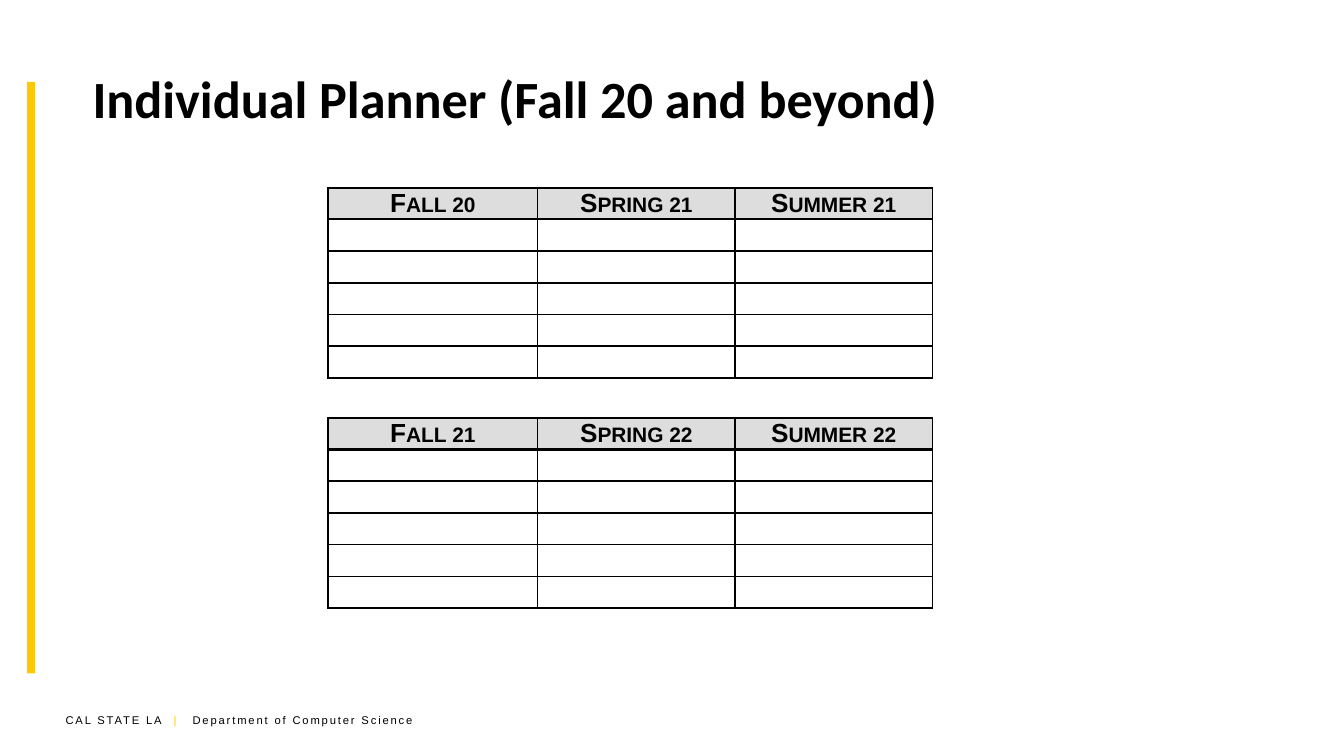
"""Build the individual planner slide with two term tables."""
from lxml import etree
from pptx import Presentation
from pptx.dml.color import RGBColor
from pptx.enum.shapes import MSO_SHAPE
from pptx.enum.text import MSO_ANCHOR, PP_ALIGN
from pptx.oxml.ns import qn
from pptx.util import Cm, Pt

RECT = MSO_SHAPE.RECTANGLE
MIDDLE = MSO_ANCHOR.MIDDLE
CENTER = PP_ALIGN.CENTER

COLORS = {"ink": "000000", "gold": "FCC90A", "head": "DDDDDD"}
TITLE = "Individual Planner (Fall 20 and beyond)"
FOOTER = [
    ("CAL STATE LA", "ink"),
    ("\t|\t", "gold"),
    ("Department of Computer Science", "ink"),
]
YEARS = [
    ["Fall 20", "Spring 21", "Summer 21"],
    ["Fall 21", "Spring 22", "Summer 22"],
]
FORMATS = {
    "title": {"name": "Calibri", "size": Pt(28), "bold": True},
    "head": {"name": "Arial", "size": Pt(14), "bold": True},
    "footer": {"name": "Arial", "size": Pt(6)},
}
TABS = [2.04, 2.4]
COLS = [3.96, 3.73, 3.73]
ROWS = [0.57] + [0.6] * 5
LEFT, TOP, STEP = 6.2, 3.55, 4.35


def color(key):
    return RGBColor.from_string(COLORS[key])


def add_run(para, text, style, ink="ink"):
    run = para.add_run()
    run.text = text
    for key, value in FORMATS[style].items():
        setattr(run.font, key, value)
    run.font.color.rgb = color(ink)
    return run


def add_box(slide, *place):
    frame = slide.shapes.add_textbox(*map(Cm, place)).text_frame
    frame.word_wrap = True
    return frame


def add_lines(cell, row):
    props = cell._tc.get_or_add_tcPr()
    thick = {0: "B", 1: "T"}.get(row)
    for side in "LRTB":
        width = Pt(1.5 if side == thick else 1)
        line = etree.SubElement(props, qn(f"a:ln{side}"), w=str(width))
        fill = etree.SubElement(line, qn("a:solidFill"))
        etree.SubElement(fill, qn("a:srgbClr"), val=COLORS["ink"])


def add_planner(slide, terms, top):
    table = slide.shapes.add_table(
        len(ROWS), len(COLS), Cm(LEFT), Cm(top), Cm(sum(COLS)), Cm(sum(ROWS))
    ).table
    for col, width in zip(table.columns, COLS):
        col.width = Cm(width)
    for i, height in enumerate(ROWS):
        table.rows[i].height = Cm(height)
        for j, term in enumerate(terms):
            cell = table.cell(i, j)
            cell.margin_left = cell.margin_right = Cm(0.15)
            cell.margin_top = cell.margin_bottom = 0
            cell.vertical_anchor = MIDDLE
            add_lines(cell, i)
            para = cell.text_frame.paragraphs[0]
            if i:
                cell.fill.background()
                etree.SubElement(para._p, qn("a:endParaRPr"), sz="1000")
            else:
                cell.fill.solid()
                cell.fill.fore_color.rgb = color("head")
                para.alignment = CENTER
                run = add_run(para, term, "head")
                run.font._element.set("cap", "small")


def add_footer(slide):
    para = add_box(slide, 0.99, 13.36, 7.42, 0.51).paragraphs[0]
    stops = etree.SubElement(para._p.get_or_add_pPr(), qn("a:tabLst"))
    for stop in TABS:
        etree.SubElement(stops, qn("a:tab"), pos=str(Cm(stop)), algn="l")
    for text, ink in FOOTER:
        run = add_run(para, text, "footer", ink)
        run.font._element.set("spc", "100")


def main():
    deck = Presentation()
    deck.slide_width, deck.slide_height = Cm(25.4), Cm(14.29)
    slide = deck.slides.add_slide(deck.slide_layouts[6])
    add_footer(slide)
    bar = slide.shapes.add_shape(RECT, Cm(0.51), Cm(1.55), Cm(0.15), Cm(11.18))
    bar.shadow.inherit = False
    bar.fill.solid()
    bar.fill.fore_color.rgb = color("gold")
    bar.line.fill.background()
    title = add_box(slide, 1.5, 0.66, 22.6, 2.39)
    title.vertical_anchor = MIDDLE
    add_run(title.paragraphs[0], TITLE, "title")
    for i, terms in enumerate(YEARS):
        add_planner(slide, terms, TOP + i * STEP)
    deck.save("out.pptx")


if __name__ == "__main__":
    main()
